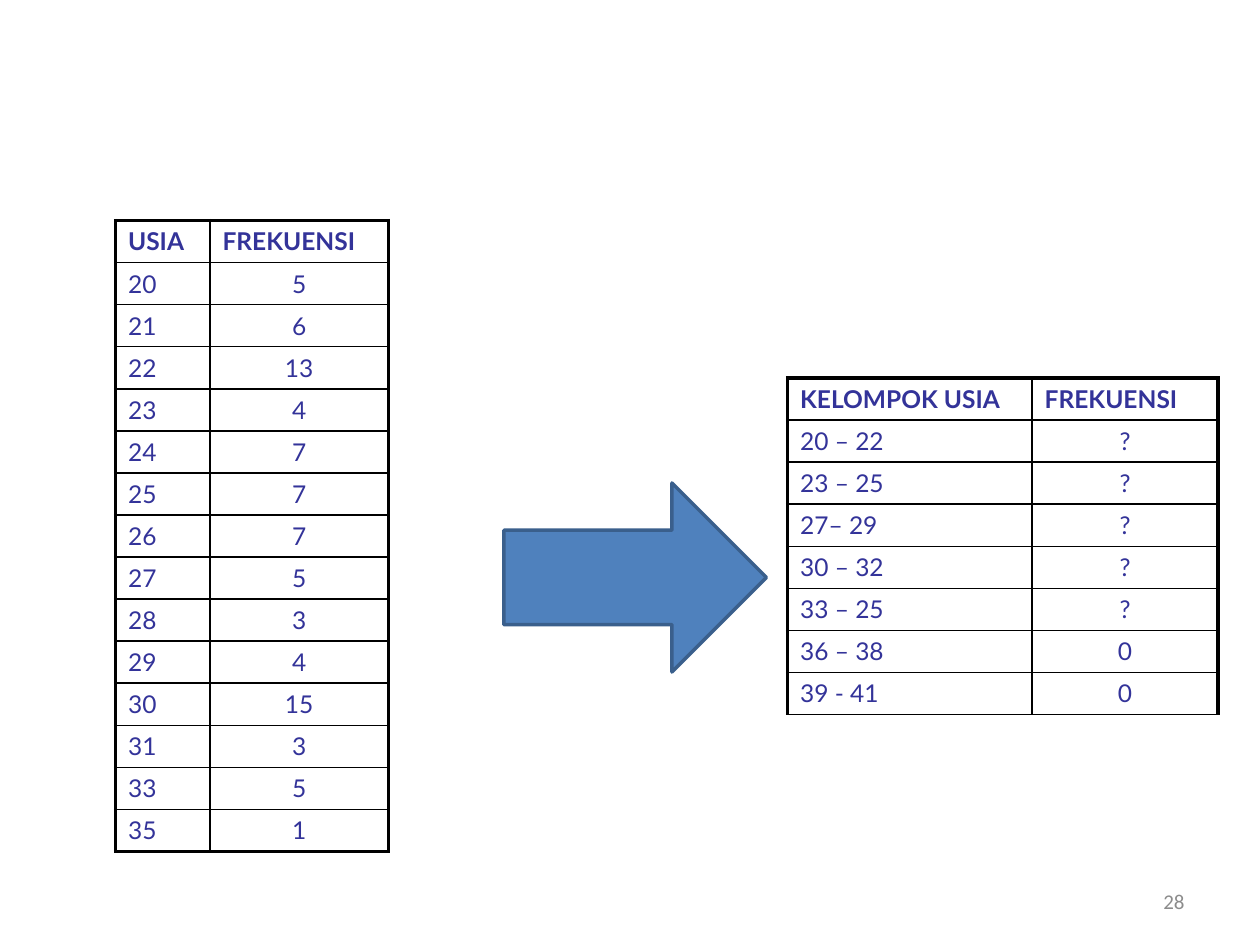
from dataclasses import dataclass

from lxml.etree import SubElement
from pptx import Presentation
from pptx.dml.color import RGBColor
from pptx.enum.shapes import MSO_SHAPE as Shape
from pptx.enum.text import MSO_ANCHOR as Anchor, PP_ALIGN as Align
from pptx.oxml.ns import qn
from pptx.util import Inches, Pt

UNIT = Inches(1) // 12  # the slide is a grid of 120 columns by 90 rows
ROW_UNITS = 4
INK, BORDER = "333399", "000000"
THICK, THIN = 2.25, 1


@dataclass
class FrequencyTable:
    left: float
    top: float
    widths: tuple[float, float]
    heading: str
    entries: list[tuple[str, str]]
    bottom_border: float


TABLES = [
    FrequencyTable(
        11, 21, (9, 17), "USIA",
        [("20", "5"), ("21", "6"), ("22", "13"), ("23", "4"), ("24", "7"),
         ("25", "7"), ("26", "7"), ("27", "5"), ("28", "3"), ("29", "4"),
         ("30", "15"), ("31", "3"), ("33", "5"), ("35", "1")],
        THICK),
    FrequencyTable(
        75, 36, (23.3, 17.7), "KELOMPOK USIA",
        [("20 – 22", "?"), ("23 – 25", "?"), ("27– 29", "?"), ("30 – 32", "?"),
         ("33 – 25", "?"), ("36 – 38", "0"), ("39 - 41", "0")],
        THIN),
]


def units(count: float) -> int:
    return round(count * UNIT)


def color(value: str) -> RGBColor:
    return RGBColor.from_string(value)


def style_text(para, font: str, size: float, ink: str, align, bold: bool = False) -> None:
    para.alignment = align
    for span in para.runs:
        span.font.name = font
        span.font.size = Pt(size)
        span.font.bold = bold
        span.font.color.rgb = color(ink)


def set_borders(cell, **widths: float) -> None:
    """Draw the cell's sides, given as lnL, lnR, lnT, lnB in schema order."""
    properties = cell._tc.get_or_add_tcPr()
    for position, (side, width) in enumerate(widths.items()):
        line = SubElement(properties, qn(f"a:{side}"), w=str(Pt(width)))
        fill = SubElement(line, qn("a:solidFill"))
        SubElement(fill, qn("a:srgbClr"), val=BORDER)
        properties.insert(position, line)


def add_frequency_table(page, data: FrequencyTable) -> None:
    rows = [(data.heading, "FREKUENSI"), *data.entries]
    table = page.shapes.add_table(
        len(rows), 2, units(data.left), units(data.top),
        units(sum(data.widths)), units(ROW_UNITS * len(rows))).table
    table.first_row = table.horz_banding = False
    for column, width in zip(table.columns, data.widths):
        column.width = units(width)
    for r, texts in enumerate(rows):
        table.rows[r].height = units(ROW_UNITS)
        for c, text in enumerate(texts):
            cell = table.cell(r, c)
            cell.fill.background()
            para = cell.text_frame.paragraphs[0]
            para.text = text
            align = Align.CENTER if r and c else Align.LEFT
            style_text(para, "Lato", 14, INK, align, bold=r == 0)
            set_borders(
                cell,
                lnL=THIN if c else THICK,
                lnR=THICK if c else THIN,
                lnT=THIN if r else THICK,
                lnB=data.bottom_border if r == len(rows) - 1 else THIN)


def add_arrow(page) -> None:
    arrow = page.shapes.add_shape(
        Shape.RIGHT_ARROW, units(48), units(46), units(25), units(18))
    arrow.shadow.inherit = False
    arrow.fill.solid()
    arrow.fill.fore_color.rgb = color("4F81BD")
    arrow.line.color.rgb = color("3A5F8C")
    arrow.line.width = Pt(2)


def add_page_number(page, number: str) -> None:
    box = page.shapes.add_textbox(units(86), units(83.4), units(28), units(4.8))
    frame = box.text_frame
    frame.word_wrap = True
    frame.vertical_anchor = Anchor.MIDDLE
    frame.text = number
    style_text(frame.paragraphs[0], "Calibri", 12, "8C8C8C", Align.RIGHT)


def main() -> None:
    deck = Presentation()
    deck.slide_width, deck.slide_height = units(120), units(90)
    page = deck.slides.add_slide(deck.slide_layouts[6])
    add_page_number(page, "28")
    ages, age_groups = TABLES
    add_frequency_table(page, ages)
    add_arrow(page)
    add_frequency_table(page, age_groups)
    deck.save("out.pptx")


if __name__ == "__main__":
    main()
